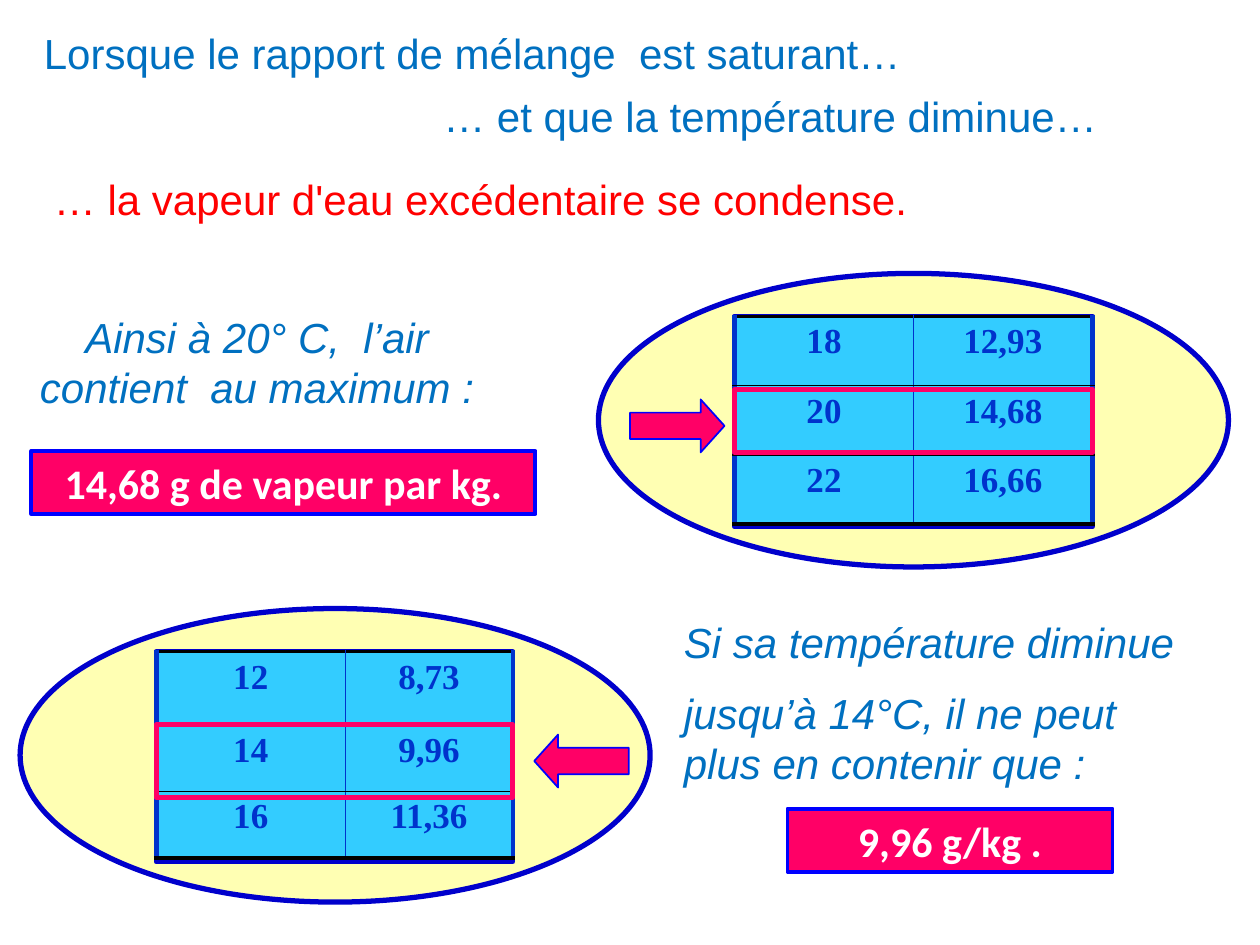
from lxml import etree
from pptx import Presentation
from pptx.dml.color import RGBColor
from pptx.enum import shapes as sh, text as tx
from pptx.oxml import ns
from pptx.util import Inches, Pt

BLUE = RGBColor(0x00, 0x70, 0xC0)
RED = RGBColor(0xFF, 0x00, 0x00)
WHITE = RGBColor(0xFF, 0xFF, 0xFF)
BLACK = RGBColor(0x00, 0x00, 0x00)
PINK = RGBColor(0xFF, 0x00, 0x66)
FRAME_BLUE = RGBColor(0x00, 0x00, 0xFF)
NAVY = RGBColor(0x00, 0x00, 0xCC)
PALE_YELLOW = RGBColor(0xFF, 0xFF, 0xB3)
SKY = RGBColor(0x66, 0xCC, 0xFF)
CELL_FILL = RGBColor(0x33, 0xCC, 0xFF)
CELL_BLUE = RGBColor(0x00, 0x33, 0xCC)


def write(frame, content, size=24, font="Arial", color=BLUE, bold=False,
          italic=False, align=tx.PP_ALIGN.LEFT, gap=12):
    """Fill a text frame, one paragraph per line of content."""
    frame.word_wrap = True
    for index, line in enumerate(content.split("\n")):
        paragraph = frame.add_paragraph() if index else frame.paragraphs[0]
        if index:
            paragraph.space_before = Pt(gap)
        paragraph.alignment = align
        run = paragraph.add_run()
        run.text = line
        run.font.size, run.font.name = Pt(size), font
        run.font.bold, run.font.italic = bold, italic
        run.font.color.rgb = color


def add_statement(slide, box, content, **style):
    """Place a free line of text in the given box."""
    statement = slide.shapes.add_textbox(*map(Inches, box))
    write(statement.text_frame, content, **style)
    statement.text_frame.auto_size = tx.MSO_AUTO_SIZE.SHAPE_TO_FIT_TEXT


def add_figure(slide, preset, box, fill, line, width):
    """Place a preset shape, hollow when fill is None."""
    figure = slide.shapes.add_shape(preset, *map(Inches, box))
    figure.shadow.inherit = False
    if fill is None:
        figure.fill.background()
    else:
        figure.fill.solid()
        figure.fill.fore_color.rgb = fill
    figure.line.color.rgb = line
    figure.line.width = Pt(width)
    return figure


def add_result(slide, box, content):
    """Place a highlighted result in its framed box."""
    result = add_figure(slide, sh.MSO_SHAPE.RECTANGLE, box, PINK, FRAME_BLUE, 2.25)
    write(result.text_frame, content, font="Calibri", color=WHITE, bold=True,
          align=tx.PP_ALIGN.CENTER)
    result.text_frame.vertical_anchor = tx.MSO_ANCHOR.MIDDLE


def set_border(cell, side, color, width):
    """Draw one border of a table cell."""
    line = etree.SubElement(cell._tc.get_or_add_tcPr(), ns.qn(f"a:ln{side}"),
                            w=str(Pt(width)))
    fill = etree.SubElement(line, ns.qn("a:solidFill"))
    etree.SubElement(fill, ns.qn("a:srgbClr"), val=str(color))


def add_saturation_table(slide, box, values, widths, heights):
    """Place the table of temperatures and saturating mixing ratios."""
    last_row, last_column = len(heights) - 1, len(widths) - 1
    table = slide.shapes.add_table(len(heights), len(widths), *map(Inches, box)).table
    table.first_row = table.horz_banding = False
    for column, width in zip(table.columns, widths):
        column.width = Inches(width)
    for row, height in zip(table.rows, heights):
        row.height = Inches(height)
    for r, record in enumerate(values):
        for c, value in enumerate(record):
            cell = table.cell(r, c)
            write(cell.text_frame, value, size=20, font="Times New Roman",
                  color=CELL_BLUE, bold=True, align=tx.PP_ALIGN.CENTER)
            set_border(cell, "L", CELL_BLUE, 3 if c == 0 else 1)
            set_border(cell, "R", CELL_BLUE, 3 if c == last_column else 1)
            set_border(cell, "T", BLACK, 2.25 if r == 0 else 1)
            set_border(cell, "B", BLACK, 2.25 if r == last_row else 1)
            cell.fill.solid()
            cell.fill.fore_color.rgb = CELL_FILL


def add_saturation_panel(slide, box, values, widths, heights, marker_height,
                         arrow_preset, arrow_offset):
    """Place an oval with its table, marked row and pointing arrow."""
    left, top, width, height = box
    table_left, table_top = left + 1.08, top + 0.34
    table_width = sum(widths)
    add_figure(slide, sh.MSO_SHAPE.OVAL, box, PALE_YELLOW, NAVY, 3)
    add_figure(slide, sh.MSO_SHAPE.RECTANGLE,
               (table_left, table_top, table_width, 1.67), SKY, NAVY, 3)
    add_saturation_table(slide, (table_left, table_top, table_width, sum(heights)),
                         values, widths, heights)
    add_figure(slide, sh.MSO_SHAPE.RECTANGLE,
               (table_left, table_top + 0.58, table_width, marker_height),
               None, PINK, 3)
    arrow = add_figure(slide, arrow_preset,
                       (table_left + arrow_offset, table_top + 0.66, 0.75, 0.42),
                       PINK, FRAME_BLUE, 1)
    arrow.adjustments[0], arrow.adjustments[1] = 0.5, 0.45


def main():
    """Build the slide on saturation and condensation."""
    deck = Presentation()
    deck.slide_width, deck.slide_height = Inches(10), Inches(7.5)
    slide = deck.slides.add_slide(deck.slide_layouts[6])

    add_statement(slide, (0.25, 0.17, 7.75, 0.5),
                  "Lorsque le rapport de mélange  est saturant…")
    add_statement(slide, (3.42, 0.67, 6.42, 0.5), "… et que la température diminue…")
    add_statement(slide, (0.33, 1.33, 8.58, 0.5),
                  "… la vapeur d'eau excédentaire se condense.", color=RED)

    add_saturation_panel(
        slide, (4.75, 2.17, 5, 2.33),
        [("18", "12,93"), ("20", "14,68"), ("22", "16,66")],
        (1.42, 1.42), (0.55, 0.55, 0.55), 0.5, sh.MSO_SHAPE.RIGHT_ARROW, -0.83)
    add_statement(slide, (0, 2.42, 4.08, 0.91),
                  "Ainsi à 20° C,  l’air contient  au maximum :",
                  italic=True, align=tx.PP_ALIGN.CENTER)
    add_result(slide, (0.25, 3.58, 4, 0.5), "14,68 g de vapeur par kg.")

    add_saturation_panel(
        slide, (0.16, 4.83, 5, 2.33),
        [("12", "8,73"), ("14", "9,96"), ("16", "11,36")],
        (1.5, 1.33), (0.58, 0.53, 0.53), 0.58, sh.MSO_SHAPE.LEFT_ARROW, 3)
    add_statement(slide, (5.33, 4.84, 4.17, 1.51),
                  "Si sa température diminue\n"
                  "jusqu’à 14°C, il ne peut plus en contenir que :", italic=True)
    add_result(slide, (6.25, 6.42, 2.58, 0.5), "9,96 g/kg .")

    deck.save("out.pptx")


if __name__ == "__main__":
    main()
